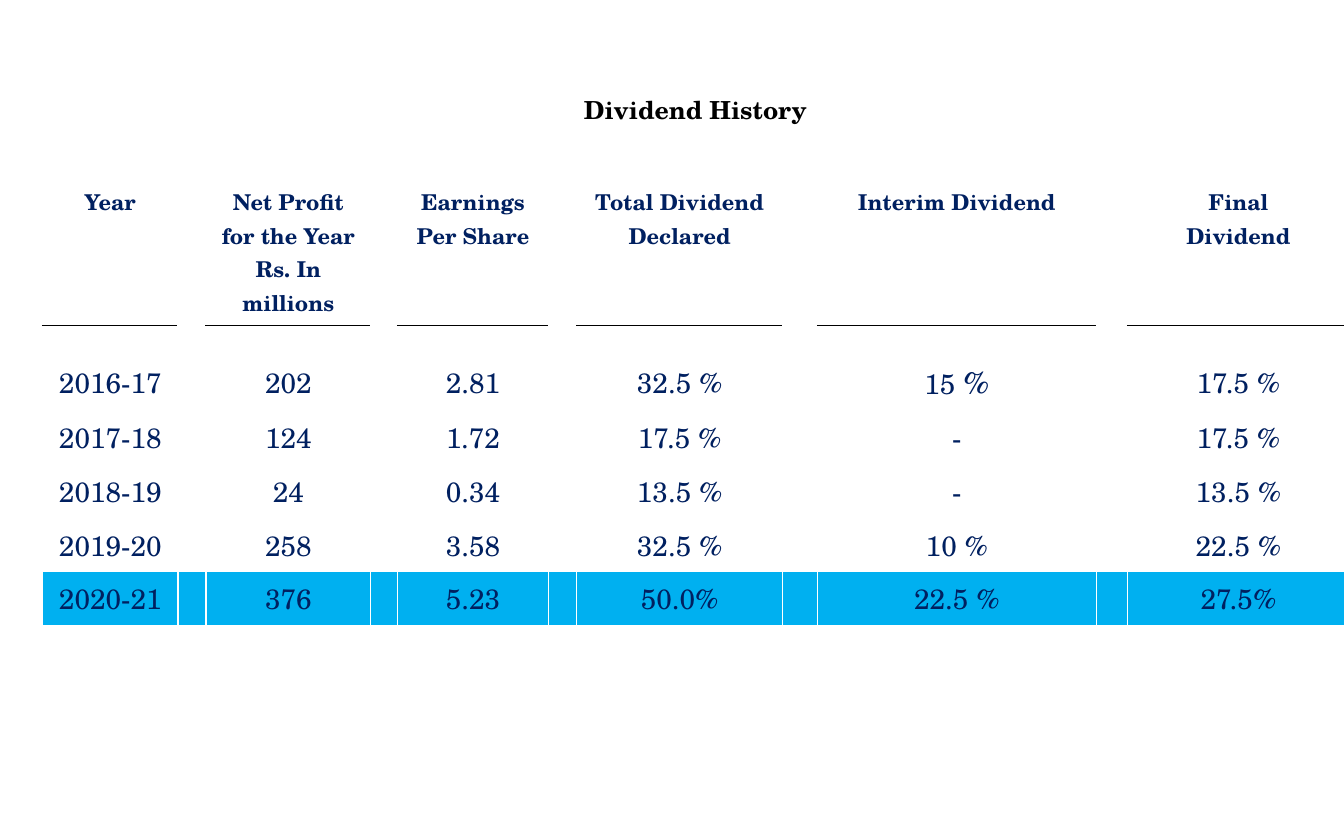
from lxml import etree
from pptx import Presentation
from pptx.dml.color import RGBColor
from pptx.enum.text import MSO_ANCHOR, PP_ALIGN
from pptx.oxml.ns import qn
from pptx.util import Inches, Pt

CENTER = PP_ALIGN.CENTER
TOP, MIDDLE = MSO_ANCHOR.TOP, MSO_ANCHOR.MIDDLE

FONT = "TeX Gyre Schola"
COLORS = {"white": "FFFFFF", "black": "000000", "navy": "002060", "latest": "00B0F0"}

COLUMN_WIDTHS = [1.21, 0.25, 1.47, 0.23, 1.35, 0.25, 1.84, 0.31, 2.02, 0.28, 1.98]
ROW_HEIGHTS = [0.84, 1.27, 0.25, 0.49, 0.48, 0.48, 0.48, 0.48, 0.48]
TITLE_ROW, HEADER_ROW, SPACER_ROW, FIRST_YEAR_ROW = range(4)
LATEST_ROW, FOOTER_ROW = 7, 8

HEADERS = [
    "Year",
    "Net Profit for the Year\nRs. In millions",
    "Earnings Per Share",
    "Total Dividend\nDeclared",
    "Interim Dividend",
    "Final\nDividend",
]
YEARS = [
    ["2016-17", "202", "2.81", "32.5 %", "15 ", "17.5 %"],
    ["2017-18", "124", "1.72", "17.5 %", "-", "17.5 %"],
    ["2018-19", "24", "0.34", "13.5 %", "-", "13.5 %"],
    ["2019-20", "258", "3.58", "32.5 %", "10 %", "22.5 %"],
    ["2020-21", "376", "5.23", "50.0%", "22.5 %", "27.5%"],
]
INTERIM_COLUMN = 8


def style_run(run, size, color, bold):
    run.font.name = FONT
    run.font.size = Pt(size)
    run.font.bold = bold
    run.font.color.rgb = RGBColor.from_string(COLORS[color])


def write_cell(cell, text, size, color="navy", bold=False, anchor=MIDDLE):
    cell.text_frame.text = text
    cell.vertical_anchor = anchor
    for paragraph in cell.text_frame.paragraphs:
        paragraph.alignment = CENTER
        for run in paragraph.runs:
            style_run(run, size, color, bold)


def set_borders(cell, top="white", bottom="white", bottom_width=1):
    properties = cell._tc.get_or_add_tcPr()
    sides = [("L", "white", 1), ("R", "white", 1), ("T", top, 1), ("B", bottom, bottom_width)]
    for position, (side, color, width) in enumerate(sides):
        border = etree.Element(qn(f"a:ln{side}"), w=str(Pt(width)))
        fill = etree.SubElement(border, qn("a:solidFill"))
        etree.SubElement(fill, qn("a:srgbClr"), val=COLORS[color])
        properties.insert(position, border)


def shrink_empty_cell(cell):
    paragraph = cell.text_frame.paragraphs[0]
    etree.SubElement(paragraph._p, qn("a:endParaRPr"), sz="800")


def add_grid(slide):
    frame = slide.shapes.add_table(
        len(ROW_HEIGHTS), len(COLUMN_WIDTHS),
        Inches(0.38), Inches(0.76), Inches(sum(COLUMN_WIDTHS)), Inches(sum(ROW_HEIGHTS)),
    )
    grid = frame.table
    grid.first_row = False
    grid.horz_banding = False
    for column, width in zip(grid.columns, COLUMN_WIDTHS):
        column.width = Inches(width)
    for row, height in zip(grid.rows, ROW_HEIGHTS):
        row.height = Inches(height)
    return grid


def paint_grid(grid):
    for row_index, row in enumerate(grid.rows):
        for column_index, cell in enumerate(row.cells):
            color = "latest" if row_index == LATEST_ROW else "white"
            cell.fill.solid()
            cell.fill.fore_color.rgb = RGBColor.from_string(COLORS[color])
            rule = "black" if column_index % 2 == 0 else "white"
            set_borders(
                cell,
                top=rule if row_index == SPACER_ROW else "white",
                bottom=rule if row_index == HEADER_ROW else "white",
                bottom_width=3 if row_index == TITLE_ROW else 1,
            )
            if row_index == SPACER_ROW:
                shrink_empty_cell(cell)


def fill_title(grid):
    title = grid.cell(TITLE_ROW, 0)
    title.merge(grid.cell(TITLE_ROW, INTERIM_COLUMN))
    title.margin_left = Inches(2.35)
    write_cell(title, "Dividend History", 16, "black", True, TOP)


def fill_dividends(grid):
    for index, header in enumerate(HEADERS):
        write_cell(grid.cell(HEADER_ROW, 2 * index), header, 14, bold=True, anchor=TOP)
    for row_index, year in enumerate(YEARS, FIRST_YEAR_ROW):
        for index, value in enumerate(year):
            write_cell(grid.cell(row_index, 2 * index), value, 18)
    first_interim = grid.cell(FIRST_YEAR_ROW, INTERIM_COLUMN).text_frame.paragraphs[0]
    percent = first_interim.add_run()
    percent.text = "%"
    style_run(percent, 20, "navy", False)


def main():
    deck = Presentation()
    deck.slide_width = Inches(12)
    deck.slide_height = Inches(7.5)
    slide = deck.slides.add_slide(deck.slide_layouts[6])
    grid = add_grid(slide)
    paint_grid(grid)
    fill_title(grid)
    fill_dividends(grid)
    grid.cell(FOOTER_ROW, 0).merge(grid.cell(FOOTER_ROW, 6))
    deck.save("out.pptx")


if __name__ == "__main__":
    main()
